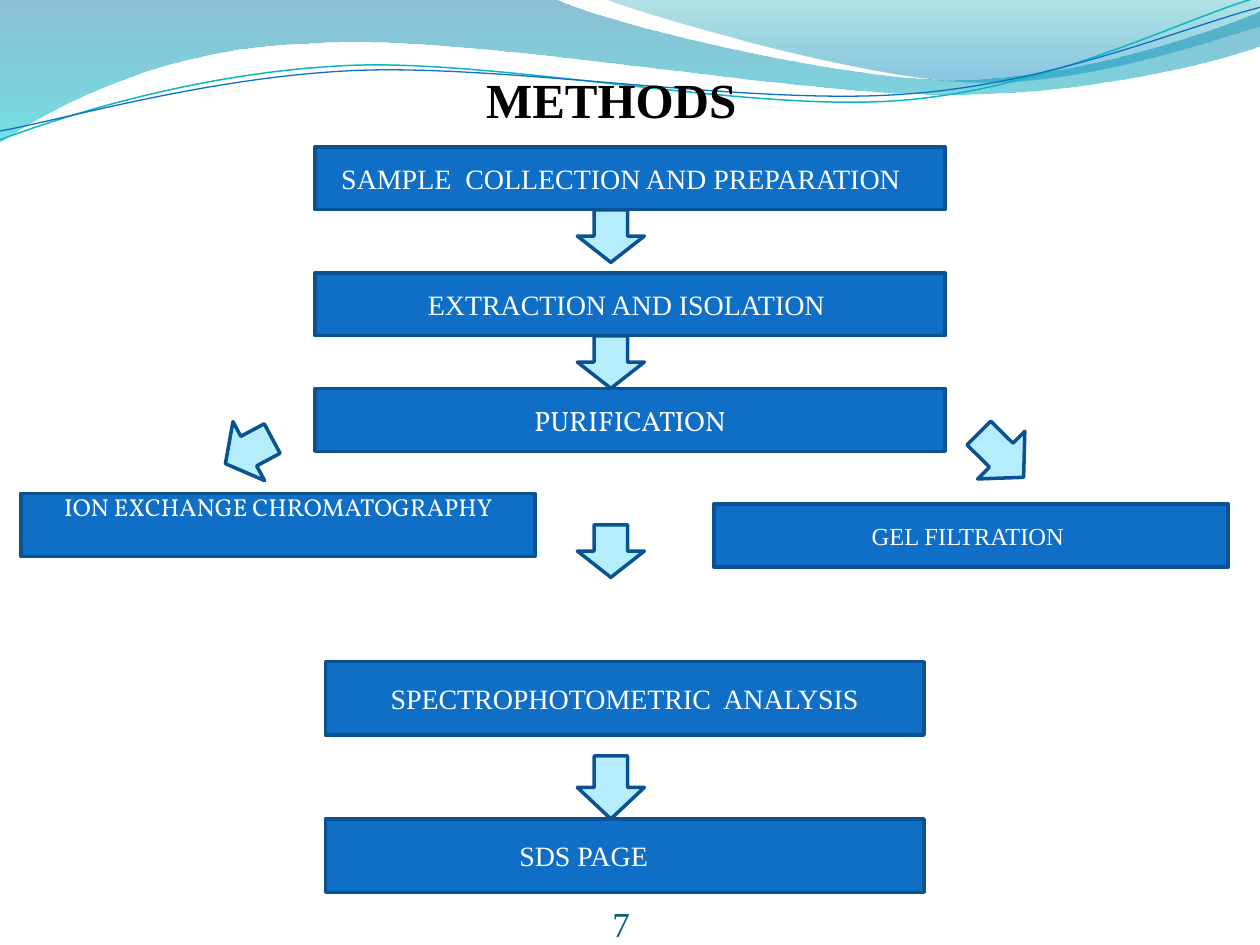
from lxml import etree
from pptx import Presentation
from pptx.dml.color import RGBColor
from pptx.enum.shapes import MSO_SHAPE
from pptx.enum.text import MSO_ANCHOR, MSO_AUTO_SIZE, PP_ALIGN
from pptx.oxml.ns import qn
from pptx.util import Cm, Pt

RECT, DOWN_ARROW = MSO_SHAPE.RECTANGLE, MSO_SHAPE.DOWN_ARROW
TOP, MIDDLE, BOTTOM = MSO_ANCHOR.TOP, MSO_ANCHOR.MIDDLE, MSO_ANCHOR.BOTTOM
LEFT, CENTER, RIGHT = PP_ALIGN.LEFT, PP_ALIGN.CENTER, PP_ALIGN.RIGHT
NO_FIT = MSO_AUTO_SIZE.NONE
TITLE_ONLY = 5
SERIF, VOLLKORN = "Times New Roman", "Vollkorn"
INSETS = (0.25, 0.13, 0.25, 0.13)


def rgb(color):
    return RGBColor.from_string(color)


def write(sp, text, font=SERIF, size=16, color="FFFFFF", bold=False,
          align=CENTER, anchor=MIDDLE, insets=INSETS):
    tf = sp.text_frame
    tf.word_wrap = True
    tf.auto_size = NO_FIT
    tf.vertical_anchor = anchor
    (tf.margin_left, tf.margin_top,
     tf.margin_right, tf.margin_bottom) = map(Cm, insets)
    p = tf.paragraphs[0]
    p.alignment = align
    r = p.add_run()
    r.text = text
    r.font.name, r.font.size, r.font.bold = font, Pt(size), bold
    r.font.color.rgb = rgb(color)


def bend(sp, segments):
    """Join the lines of each three-point segment into one cubic curve."""
    lines = iter(list(sp._element.iter(qn("a:lnTo"))))
    for segment in segments:
        parts = [next(lines) for _ in segment]
        if len(parts) == 3:
            cubic = etree.Element(qn("a:cubicBezTo"))
            parts[0].addprevious(cubic)
            for part in parts:
                cubic.append(part[0])
                part.getparent().remove(part)


class FlowSlide:
    box_fill, arrow_fill, edge = "0F6FC6", "B5EDFD", "0B5292"

    def __init__(self, prs):
        self.s = prs.slides.add_slide(prs.slide_layouts[TITLE_ONLY])
        self.shapes = self.s.shapes

    def curve(self, start, segments, close):
        builder = self.shapes.build_freeform(*map(Cm, start))
        points = [(Cm(x), Cm(y)) for segment in segments for x, y in segment]
        builder.add_line_segments(points, close=close)
        sp = builder.convert_to_shape()
        sp.shadow.inherit = False
        bend(sp, segments)
        return sp

    def wave(self, start, segments, stops):
        """Add a closed wave; stops are (position, colour, opacity percent)."""
        sp = self.curve(start, segments, True)
        sp.line.fill.background()
        sp.fill.gradient()
        sp.fill.gradient_angle = 270
        for stop, (position, color, _) in zip(sp.fill.gradient_stops, stops):
            stop.position = position
            stop.color.rgb = rgb(color)
        for clr, (_, _, opacity) in zip(sp._element.spPr.iter(qn("a:srgbClr")), stops):
            etree.SubElement(clr, qn("a:alpha"), val=str(opacity * 1000))

    def wave_line(self, start, segments, color, width):
        sp = self.curve(start, segments, False)
        sp.fill.background()
        sp.line.color.rgb = rgb(color)
        sp.line.width = Pt(width)

    def title(self, text, x, y, w, h, **fmt):
        sp = self.shapes.title
        sp.left, sp.top, sp.width, sp.height = map(Cm, (x, y, w, h))
        write(sp, text, **fmt)
        self.shapes._spTree.append(sp._element)  # in front of the waves

    def preset(self, kind, fill, x, y, w, h):
        sp = self.shapes.add_shape(kind, *map(Cm, (x, y, w, h)))
        sp.shadow.inherit = False
        sp.fill.solid()
        sp.fill.fore_color.rgb = rgb(fill)
        sp.line.color.rgb = rgb(self.edge)
        sp.line.width = Pt(2)
        return sp

    def box(self, text, x, y, w, h, **fmt):
        write(self.preset(RECT, self.box_fill, x, y, w, h), text, **fmt)

    def arrow(self, x, y, h, rotation=0):
        sp = self.preset(DOWN_ARROW, self.arrow_fill, x, y, 1.35, h)
        sp.rotation = rotation

    def label(self, text, x, y, w, h, **fmt):
        write(self.shapes.add_textbox(*map(Cm, (x, y, w, h))), text, **fmt)


def draw_waves(slide):
    slide.wave((0, 0), [
        [(11.18, -0.03)],
        [(12.09, 0.43), (16.87, 1.6), (19.25, 1.6)],
        [(21.67, 1.6), (24.33, 0.66), (25.4, 0.23)],
        [(25.43, 0.91)],
        [(24.97, 1.12), (22.1, 1.93), (18.95, 1.9)],
        [(15.8, 1.9), (9.7, 0.71), (6.53, 0.86)],
        [(3.28, 0.91), (1.17, 2.11), (-0.03, 2.87)],
    ], [(0, "0074A1", 45), (1, "00C6CF", 55)])
    slide.wave((12.17, -0.03), [
        [(12.93, 0.28), (17.32, 1.57), (19.53, 1.65)],
        [(21.74, 1.75), (24.41, 0.81), (25.4, 0.53)],
        [(25.4, 0)],
    ], [(0, "00A1A9", 30), (0.8, "008BBF", 45)])
    slide.wave_line((0, 2.82), [
        [(1.22, 2.36), (4.01, 1.45), (7.04, 1.32)],
        [(10.03, 1.19), (15.06, 2.26), (18.11, 2.03)],
        [(21.16, 1.8), (23.83, 0.38), (25.35, -0.05)],
    ], "0AB8BF", 0.85)
    slide.wave_line((0, 2.64), [
        [(1.19, 2.44), (4.17, 1.55), (7.19, 1.42)],
        [(10.24, 1.3), (15.16, 2.13), (18.21, 1.9)],
        [(21.23, 1.7), (23.9, 0.53), (25.4, 0.15)],
    ], "0F6FC6", 0.75)


def main():
    prs = Presentation()
    prs.slide_width, prs.slide_height = Cm(25.4), Cm(19.05)
    slide = FlowSlide(prs)
    draw_waves(slide)
    slide.title("METHODS", 7.42, 1.27, 12.27, 1.45, size=28, color="000000",
                bold=True, align=LEFT, anchor=TOP, insets=(2.38, 0.13, 0.25, 0.13))

    steps = [
        ("SAMPLE  COLLECTION AND PREPARATION", 2.96,
         dict(align=LEFT, insets=(0.53, 0.13, 0.25, 0.13))),
        ("EXTRACTION AND ISOLATION ", 5.5, {}),
        ("PURIFICATION", 7.83, dict(font=VOLLKORN)),
    ]
    for text, y, fmt in steps:
        slide.box(text, 6.35, y, 12.7, 1.27, **fmt)

    slide.box("ION EXCHANGE CHROMATOGRAPHY", 0.42, 9.95, 10.37, 1.27,
              font=VOLLKORN, size=14, insets=(0.27, 0.03, 0.25, 0.75))
    slide.box("GEL FILTRATION ", 14.39, 10.16, 10.37, 1.27, size=14)

    slide.box("SPECTROPHOTOMETRIC  ANALYSIS", 6.56, 13.34, 12.07, 1.48)
    slide.box("SDS PAGE", 6.56, 16.51, 12.07, 1.48,
              align=LEFT, insets=(3.91, 0.13, 0.25, 0.13))

    for y, h in [(4.23, 1.06), (6.77, 1.06), (10.58, 1.06), (15.24, 1.27)]:
        slide.arrow(11.64, y, h)
    slide.arrow(19.51, 8.54, 1.27, rotation=314.7)
    slide.arrow(4.34, 8.56, 1.07, rotation=61.8)

    slide.label("7", 11, 18.03, 1.7, 1.02, size=20, color="045D75",
                align=RIGHT, anchor=BOTTOM, insets=(0, 0, 0, 0))
    prs.save("out.pptx")


if __name__ == "__main__":
    main()
